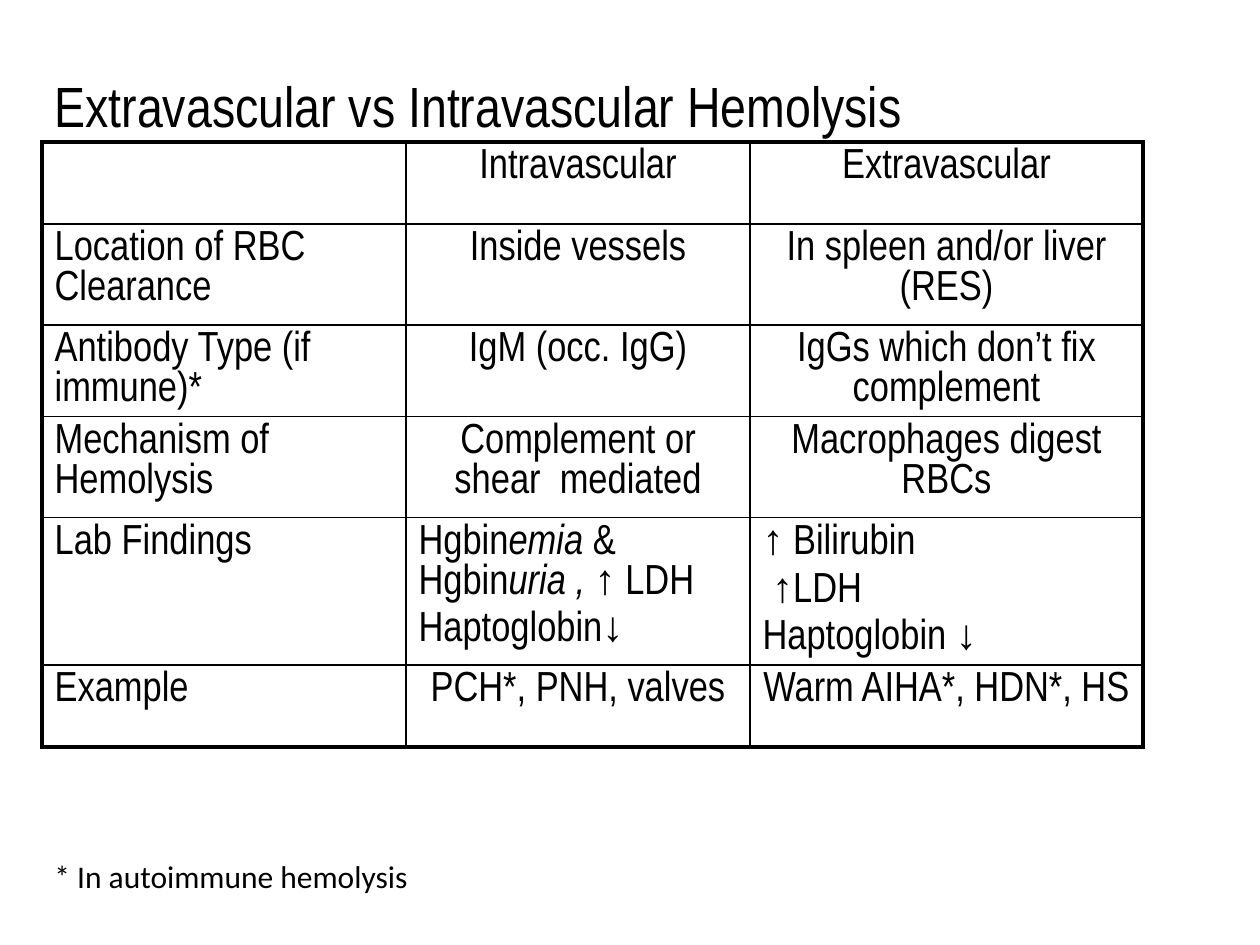
"""Build the slide comparing extravascular and intravascular hemolysis."""
from dataclasses import dataclass
from typing import NamedTuple

from lxml import etree
from pptx import Presentation
from pptx import util as u
from pptx.dml.color import RGBColor
from pptx.enum import text
from pptx.oxml.ns import qn

PX = 914400 / 126
BLACK = RGBColor(0x00, 0x00, 0x00)
NARROW, SANS = "Arial Narrow", "Calibri"
THIN, THICK = 1, 2.25
LEFT, CENTER = text.PP_ALIGN.LEFT, text.PP_ALIGN.CENTER
COLUMNS = (364, 344, 393)
ROWS = (82, 101, 82, 101, 110, 82)


class Span(NamedTuple):
    words: str
    italic: bool = False


@dataclass(frozen=True)
class Entry:
    lines: tuple[tuple[Span, ...], ...]
    align: text.PP_ALIGN = LEFT


def label(words: str) -> Entry:
    return Entry(((Span(words),),))


def centered(words: str) -> Entry:
    return Entry(((Span(words),),), CENTER)


LAB_INTRAVASCULAR = Entry((
    (Span("Hgbin"), Span("emia", True), Span(" & Hgbin"), Span("uria , ", True), Span("↑ LDH")),
    (Span("Haptoglobin↓"),),
))
LAB_EXTRAVASCULAR = Entry((
    (Span("↑ Bilirubin"),), (Span(" ↑LDH"),), (Span("Haptoglobin ↓"),),
))
ENTRIES = (
    (None, centered("Intravascular"), centered("Extravascular")),
    (label("Location of RBC Clearance"), centered("Inside vessels"),
     centered("In spleen and/or liver (RES)")),
    (label("Antibody Type (if immune)*"), centered("IgM (occ. IgG)"),
     centered("IgGs which don’t fix complement")),
    (label("Mechanism of Hemolysis"), centered("Complement or shear  mediated"),
     centered("Macrophages digest RBCs")),
    (label("Lab Findings"), LAB_INTRAVASCULAR, LAB_EXTRAVASCULAR),
    (label("Example"), centered("PCH*, PNH, valves"), centered("Warm AIHA*, HDN*, HS")),
)


def px(length: int) -> u.Emu:
    return u.Emu(round(length * PX))


def style(para, size: float, face: str, align: text.PP_ALIGN = LEFT) -> None:
    para.alignment = align
    para.font.size = u.Pt(size)
    para.font.name = face
    para.font.color.rgb = BLACK


def add_border(cell, side: str, width: float) -> None:
    line = etree.SubElement(cell._tc.get_or_add_tcPr(), qn(f"a:ln{side}"), w=str(u.Pt(width)))
    fill = etree.SubElement(line, qn("a:solidFill"))
    etree.SubElement(fill, qn("a:srgbClr"), val=str(BLACK))


def write_entry(cell, entry: Entry) -> None:
    frame = cell.text_frame
    for index, line in enumerate(entry.lines):
        para = frame.add_paragraph() if index else frame.paragraphs[0]
        if index:
            para.space_before = u.Pt(4.6)
        style(para, 24, NARROW, entry.align)
        for span in line:
            run = para.add_run()
            run.text = span.words
            if span.italic:
                run.font.italic = True


def add_title(page) -> None:
    title = page.shapes.title
    title.left, title.top, title.width, title.height = map(px, (42, 63, 1144, 84))
    frame = title.text_frame
    frame.text = "Extravascular vs Intravascular Hemolysis"
    frame.auto_size = text.MSO_AUTO_SIZE.NONE
    frame.vertical_anchor = text.MSO_ANCHOR.MIDDLE
    style(frame.paragraphs[0], 32.4, NARROW)


def add_comparison(page) -> None:
    table = page.shapes.add_table(
        len(ROWS), len(COLUMNS), px(42), px(142), px(sum(COLUMNS)), px(sum(ROWS))).table
    table.first_row = table.horz_banding = False
    for column, width in zip(table.columns, COLUMNS):
        column.width = px(width)
    for row, height in zip(table.rows, ROWS):
        row.height = px(height)
    last_row, last_column = len(ROWS) - 1, len(COLUMNS) - 1
    for r, entries in enumerate(ENTRIES):
        for c, entry in enumerate(entries):
            cell = table.cell(r, c)
            outer = {"L": c == 0, "R": c == last_column, "T": r == 0, "B": r == last_row}
            for side, is_outer in outer.items():
                add_border(cell, side, THICK if is_outer else THIN)
            cell.fill.background()
            if entry:
                write_entry(cell, entry)


def add_footnote(page) -> None:
    box = page.shapes.add_textbox(px(42), px(851), px(415), px(50))
    frame = box.text_frame
    frame.word_wrap = False
    frame.auto_size = text.MSO_AUTO_SIZE.SHAPE_TO_FIT_TEXT
    frame.text = "* In autoimmune hemolysis"
    style(frame.paragraphs[0], 18, SANS)


def main() -> None:
    deck = Presentation()
    deck.slide_width, deck.slide_height = px(1260), px(945)
    page = deck.slides.add_slide(deck.slide_layouts[5])
    add_title(page)
    add_comparison(page)
    add_footnote(page)
    deck.save("out.pptx")


if __name__ == "__main__":
    main()
